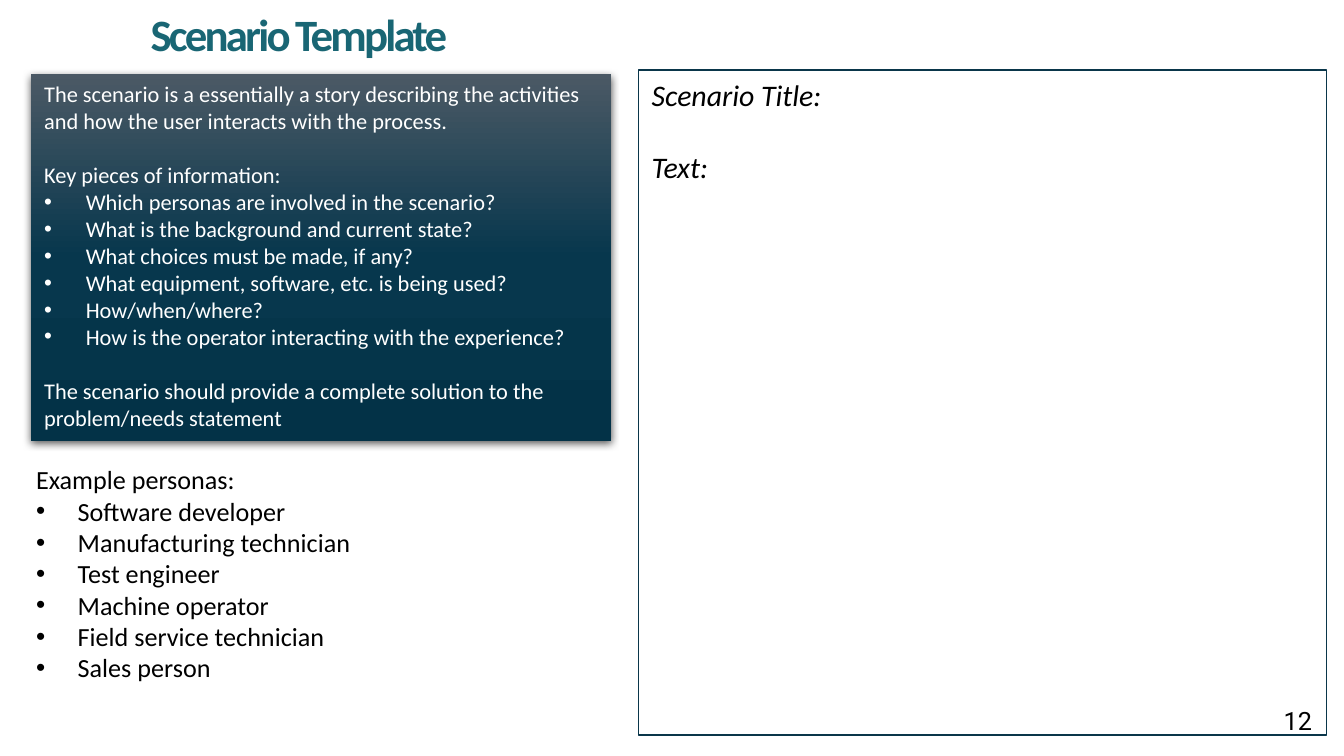
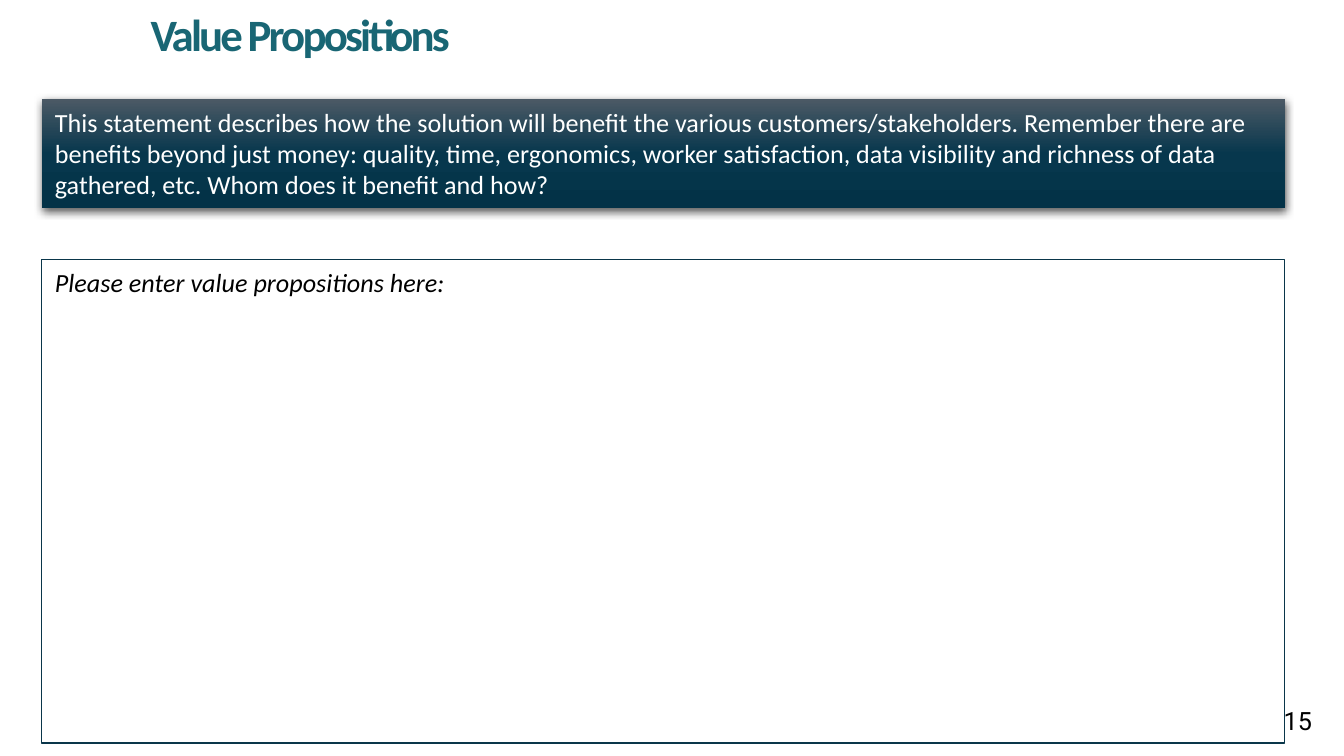
from dataclasses import dataclass

from lxml import etree
from pptx import Presentation
from pptx.dml.color import RGBColor
from pptx.enum.shapes import MSO_SHAPE
from pptx.enum.text import MSO_ANCHOR, MSO_AUTO_SIZE, PP_ALIGN
from pptx.oxml.ns import qn
from pptx.util import Inches, Pt

RECTANGLE = MSO_SHAPE.RECTANGLE
TOP, MIDDLE = MSO_ANCHOR.TOP, MSO_ANCHOR.MIDDLE
LEFT, RIGHT = PP_ALIGN.LEFT, PP_ALIGN.RIGHT
NO_AUTOFIT = MSO_AUTO_SIZE.NONE
TITLE_ONLY = 5
SLIDE_WIDTH = Inches(10)
SLIDE_HEIGHT = SLIDE_WIDTH * 9 // 16  # widescreen


# Theme
@dataclass(frozen=True)
class Theme:
    teal: str = "196674"
    outline: str = "0A364A"
    black: str = "000000"
    white: str = "FFFFFF"
    guidance_stops: tuple = ((0, "4B5965"), (50, "07374D"), (100, "033247"))
    body_font: str = "Calibri"
    number_font: str = "Roboto"
    title_size: float = 24
    entry_size: float = 16
    body_size: float = 14
    number_size: float = 13.5
    small_size: float = 12
    title_spacing: float = -1.5
    line_height: float = 1.22
    bullet_indent: float = 0.31


THEME = Theme()


# Content types
@dataclass(frozen=True)
class Box:
    left: float
    top: float
    width: float
    height: float

    def lengths(self) -> tuple:
        return tuple(Inches(v) for v in (self.left, self.top, self.width, self.height))


@dataclass(frozen=True)
class Line:
    text: str
    bullet: bool = False
    gap: bool = False  # leaves one line free above


@dataclass(frozen=True)
class TextStyle:
    size: float
    color: str = THEME.black
    font: str = THEME.body_font
    bold: bool = False
    italic: bool = False
    align: int = LEFT
    anchor: int = TOP


@dataclass(frozen=True)
class Panel:
    box: Box
    lines: tuple
    style: TextStyle


@dataclass(frozen=True)
class Page:
    title: str
    number: str
    guidance: Panel
    entry: Panel
    notes: tuple = ()


TITLE_BOX = Box(1.02, 0, 8.98, 0.5)
NUMBER_BOX = Box(7.61, 5.21, 2.25, 0.3)
TITLE_STYLE = TextStyle(THEME.title_size, THEME.teal, bold=True)
NUMBER_STYLE = TextStyle(THEME.number_size, font=THEME.number_font, align=RIGHT, anchor=MIDDLE)


def bullets(*texts: str) -> tuple:
    return tuple(Line(text, bullet=True) for text in texts)


# Text
def add_bullet(paragraph) -> None:
    properties = paragraph._p.get_or_add_pPr()
    indent = Inches(THEME.bullet_indent)
    properties.set("marL", str(indent))
    properties.set("indent", str(-indent))
    etree.SubElement(properties, qn("a:buFont")).set("typeface", "Arial")
    etree.SubElement(properties, qn("a:buChar")).set("char", "•")


def write_lines(frame, lines: tuple, style: TextStyle) -> None:
    frame_format = {"word_wrap": True, "auto_size": NO_AUTOFIT, "vertical_anchor": style.anchor}
    for name, value in frame_format.items():
        setattr(frame, name, value)
    font_format = {"name": style.font, "size": Pt(style.size),
                   "bold": style.bold, "italic": style.italic}
    for index, line in enumerate(lines):
        paragraph = frame.add_paragraph() if index else frame.paragraphs[0]
        if line.bullet:
            add_bullet(paragraph)
        paragraph.alignment = style.align
        if line.gap:
            paragraph.space_before = Pt(style.size * THEME.line_height)
        run = paragraph.add_run()
        run.text = line.text
        for name, value in font_format.items():
            setattr(run.font, name, value)
        run.font.color.rgb = RGBColor.from_string(style.color)


# Panels
def add_rectangle(slide, panel: Panel):
    rectangle = slide.shapes.add_shape(RECTANGLE, *panel.box.lengths())
    rectangle.shadow.inherit = False
    write_lines(rectangle.text_frame, panel.lines, panel.style)
    return rectangle


def add_color(parent, color: str):
    element = etree.SubElement(parent, qn("a:srgbClr"))
    element.set("val", color)
    return element


def add_guidance(slide, panel: Panel) -> None:
    rectangle = add_rectangle(slide, panel)
    rectangle.line.fill.background()
    rectangle.fill.gradient()
    rectangle.fill.gradient_angle = 270
    properties = rectangle._element.spPr
    stops = properties.find(".//" + qn("a:gsLst"))
    for default_stop in list(stops):
        stops.remove(default_stop)
    for position, color in THEME.guidance_stops:
        stop = etree.SubElement(stops, qn("a:gs"))
        stop.set("pos", str(position * 1000))
        add_color(stop, color)
    shadow = etree.SubElement(properties.find(qn("a:effectLst")), qn("a:outerShdw"))
    shadow_format = {"blurRad": Pt(4.5), "dist": Pt(1.5), "dir": 90 * 60000, "rotWithShape": 0}
    for name, value in shadow_format.items():
        shadow.set(name, str(value))
    etree.SubElement(add_color(shadow, THEME.black), qn("a:alpha")).set("val", "63000")


def add_entry(slide, panel: Panel) -> None:
    rectangle = add_rectangle(slide, panel)
    rectangle.fill.background()
    rectangle.line.color.rgb = RGBColor.from_string(THEME.outline)
    rectangle.line.width = Pt(0.75)


def add_text(slide, panel: Panel) -> None:
    text_box = slide.shapes.add_textbox(*panel.box.lengths())
    write_lines(text_box.text_frame, panel.lines, panel.style)


def place_title(slide, text: str) -> None:
    title = slide.shapes.title
    for name, value in zip(("left", "top", "width", "height"), TITLE_BOX.lengths()):
        setattr(title, name, value)
    write_lines(title.text_frame, (Line(text),), TITLE_STYLE)
    run = title.text_frame.paragraphs[0].runs[0]
    run._r.get_or_add_rPr().set("spc", str(int(THEME.title_spacing * 100)))


def add_page(deck, page: Page) -> None:
    slide = deck.slides.add_slide(deck.slide_layouts[TITLE_ONLY])
    place_title(slide, page.title)
    add_text(slide, Panel(NUMBER_BOX, (Line(page.number),), NUMBER_STYLE))
    add_guidance(slide, page.guidance)
    add_entry(slide, page.entry)
    for note in page.notes:
        add_text(slide, note)


# Scenario page
SCENARIO = Page(
    title="Scenario Template",
    number="12",
    guidance=Panel(
        Box(0.23, 0.55, 4.32, 2.73),
        (
            Line("The scenario is a essentially a story describing the activities "
                 "and how the user interacts with the process."),
            Line("Key pieces of information:", gap=True),
            *bullets(
                "Which personas are involved in the scenario?",
                "What is the background and current state?",
                "What choices must be made, if any?",
                "What equipment, software, etc. is being used?",
                "How/when/where?",
                "How is the operator interacting with the experience?",
            ),
            Line("The scenario should provide a complete solution to the "
                 "problem/needs statement", gap=True),
        ),
        TextStyle(THEME.small_size, THEME.white),
    ),
    entry=Panel(
        Box(4.75, 0.52, 5.12, 4.95),
        (Line("Scenario Title:"), Line("Text:", gap=True)),
        TextStyle(THEME.entry_size, italic=True),
    ),
    notes=(
        Panel(
            Box(0.17, 3.4, 2.57, 1.75),
            (
                Line("Example personas:"),
                *bullets("Software developer", "Manufacturing technician", "Test engineer",
                         "Machine operator", "Field service technician", "Sales person"),
            ),
            TextStyle(THEME.body_size),
        ),
    ),
)

# Value page
VALUE = Page(
    title="Value Propositions",
    number="15",
    guidance=Panel(
        Box(0.31, 0.74, 9.25, 0.81),
        (Line("This statement describes how the solution will benefit the various "
              "customers/stakeholders. Remember there are benefits beyond just money: "
              "quality, time, ergonomics, worker satisfaction, data visibility and "
              "richness of data gathered, etc. Whom does it benefit and how?"),),
        TextStyle(THEME.body_size, THEME.white),
    ),
    entry=Panel(
        Box(0.31, 1.93, 9.25, 3.6),
        (Line("Please enter value propositions here:"),),
        TextStyle(THEME.body_size, italic=True),
    ),
)


def main() -> None:
    deck = Presentation()
    deck.slide_width, deck.slide_height = SLIDE_WIDTH, SLIDE_HEIGHT
    for page in (SCENARIO, VALUE):
        add_page(deck, page)
    deck.save("out.pptx")


if __name__ == "__main__":
    main()
